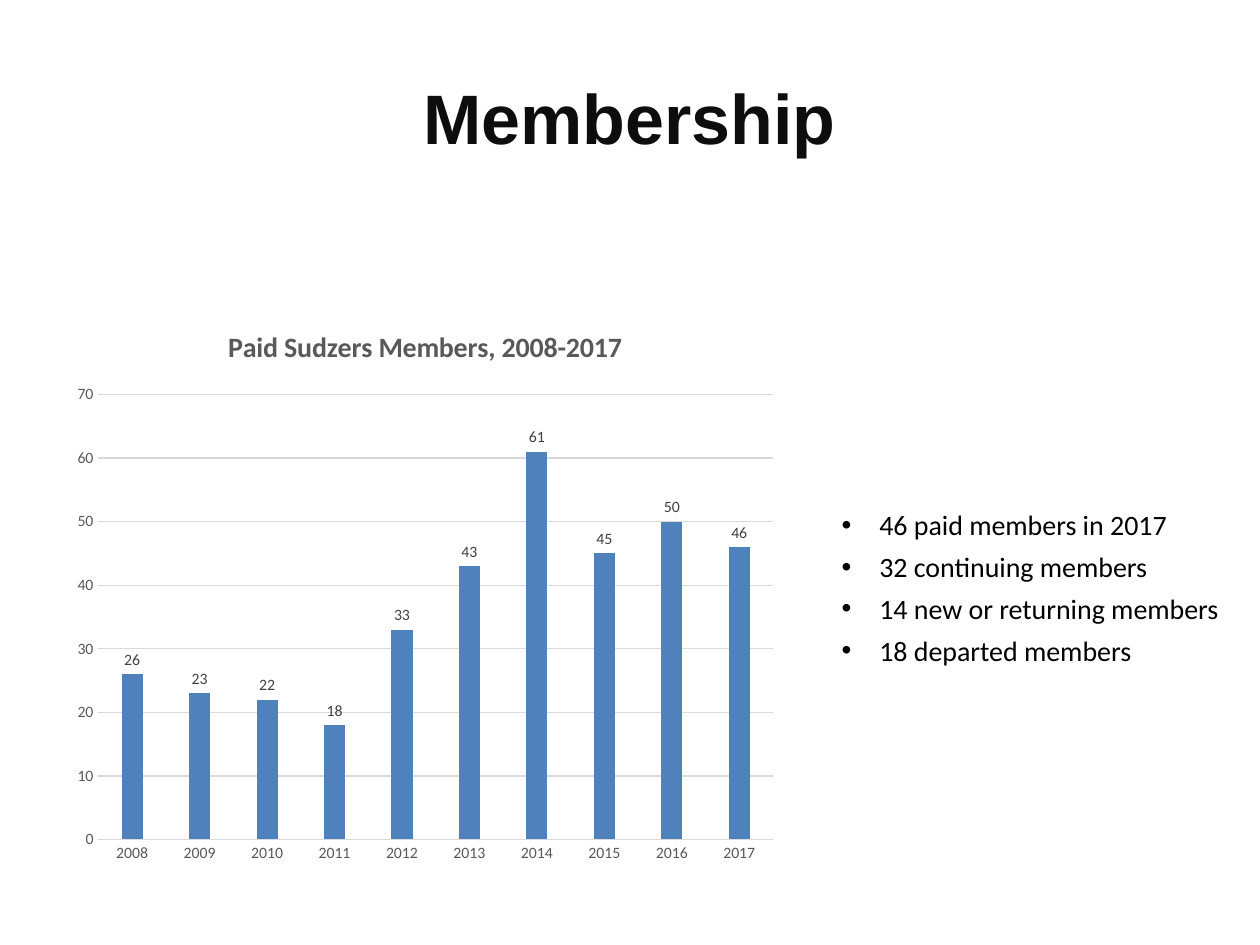
from dataclasses import dataclass
from typing import Any

from lxml import etree
from pptx import Presentation
from pptx import util as u
from pptx.chart import data as cd
from pptx.dml import color
from pptx.enum import chart as ch
from pptx.enum import text
from pptx.oxml import ns


def rgb(code):
    return color.RGBColor.from_string(code)


@dataclass
class Deck:
    """Style and current slide, with one method per kind of element."""

    s: Any
    font: str = "Calibri"
    ink: str = "000000"
    heading: str = "0D0D0D"
    muted: str = "595959"
    label: str = "404040"
    rule: str = "D9D9D9"
    bar: str = "4F81BD"

    def style(self, f, size, code, name=None, bold=False):
        f.name = name or self.font
        f.size = u.Pt(size)
        f.bold = bold
        f.color.rgb = rgb(code)

    def frame(self, box, anchor):
        tf = self.s.shapes.add_textbox(*map(u.Pt, box)).text_frame
        tf.word_wrap = True
        tf.vertical_anchor = anchor
        return tf

    def run(self, p, words, *style, **kw):
        r = p.add_run()
        r.text = words
        self.style(r.font, *style, **kw)

    def title(self, words, box):
        p = self.frame(box, text.MSO_ANCHOR.MIDDLE).paragraphs[0]
        p.alignment = text.PP_ALIGN.CENTER
        self.run(p, words, 40, self.heading, name="Arial", bold=True)

    def bullets(self, items, box, indent=21.6):
        tf = self.frame(box, text.MSO_ANCHOR.TOP)
        for i, item in enumerate(items):
            p = tf.add_paragraph() if i else tf.paragraphs[0]
            p.space_before = u.Pt(4.8 if i else 0)
            pPr = p._p.get_or_add_pPr()
            pPr.set("marL", str(u.Pt(indent)))
            pPr.set("indent", str(u.Pt(-indent)))
            etree.SubElement(pPr, ns.qn("a:buFont")).set("typeface", "Arial")
            etree.SubElement(pPr, ns.qn("a:buChar")).set("char", "•")
            self.run(p, item, 16, self.ink)

    def axis(self, axis):
        axis.major_tick_mark = axis.minor_tick_mark = ch.XL_TICK_MARK.NONE
        self.style(axis.tick_labels.font, 9, self.muted)

    def line(self, fmt):
        fmt.line.color.rgb = rgb(self.rule)
        fmt.line.width = u.Pt(0.75)

    def columns(self, heading, cats, vals, box):
        data = cd.CategoryChartData()
        data.categories = cats
        data.add_series("Series 1", vals)
        chart = self.s.shapes.add_chart(
            ch.XL_CHART_TYPE.COLUMN_CLUSTERED, *map(u.Pt, box), data).chart
        self.style(chart.font, 10, self.ink)
        chart.has_legend = False
        chart.has_title = True
        p = chart.chart_title.text_frame.paragraphs[0]
        self.run(p, heading, 16, self.muted, bold=True)
        chart.chart_title.include_in_layout = False

        cat, val = chart.category_axis, chart.value_axis
        self.axis(cat)
        self.axis(val)
        self.line(cat.format)
        val.format.line.fill.background()
        val.minimum_scale, val.maximum_scale, val.major_unit = 0, 70, 10
        self.line(val.major_gridlines.format)

        plot = chart.plots[0]
        plot.vary_by_categories = False
        plot.gap_width, plot.overlap = 219, -27
        series = plot.series[0]
        series.format.fill.solid()
        series.format.fill.fore_color.rgb = rgb(self.bar)
        labels = series.data_labels
        labels.show_value = True
        labels.position = ch.XL_LABEL_POSITION.OUTSIDE_END
        self.style(labels.font, 9, self.label)


def main():
    prs = Presentation()
    prs.slide_width, prs.slide_height = u.Pt(720), u.Pt(540)
    deck = Deck(prs.slides.add_slide(prs.slide_layouts[6]))
    deck.title("Membership", (36, 21.6, 647.3, 90))
    deck.columns("Paid Sudzers Members, 2008-2017",
                 [str(year) for year in range(2008, 2018)],
                 [26, 23, 22, 18, 33, 43, 61, 45, 50, 46],
                 (36, 174.2, 414, 325.4))
    deck.bullets(["46 paid members in 2017", "32 continuing members",
                  "14 new or returning members", "18 departed members"],
                 (473.8, 286.6, 236, 100))
    prs.save("out.pptx")


if __name__ == "__main__":
    main()
